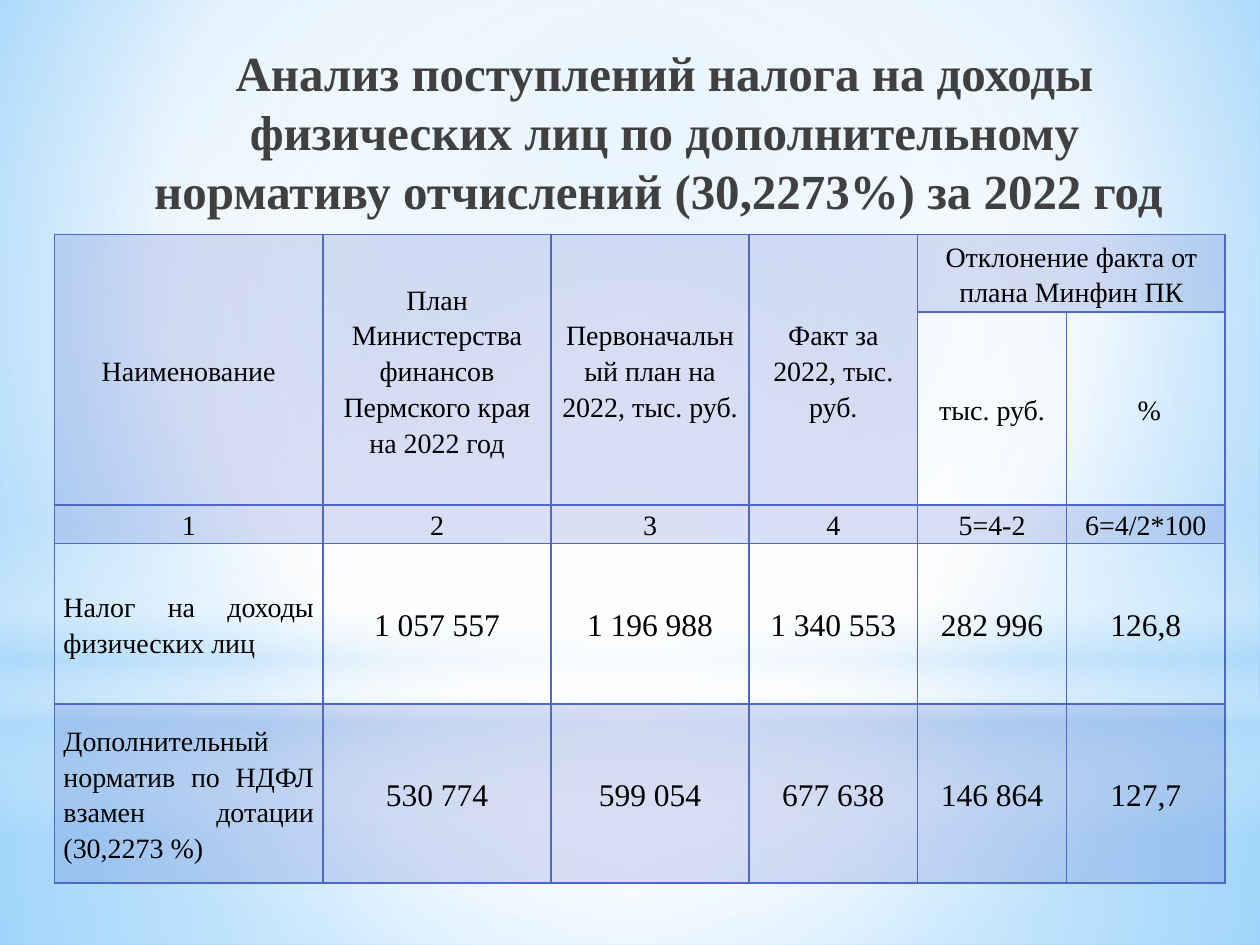
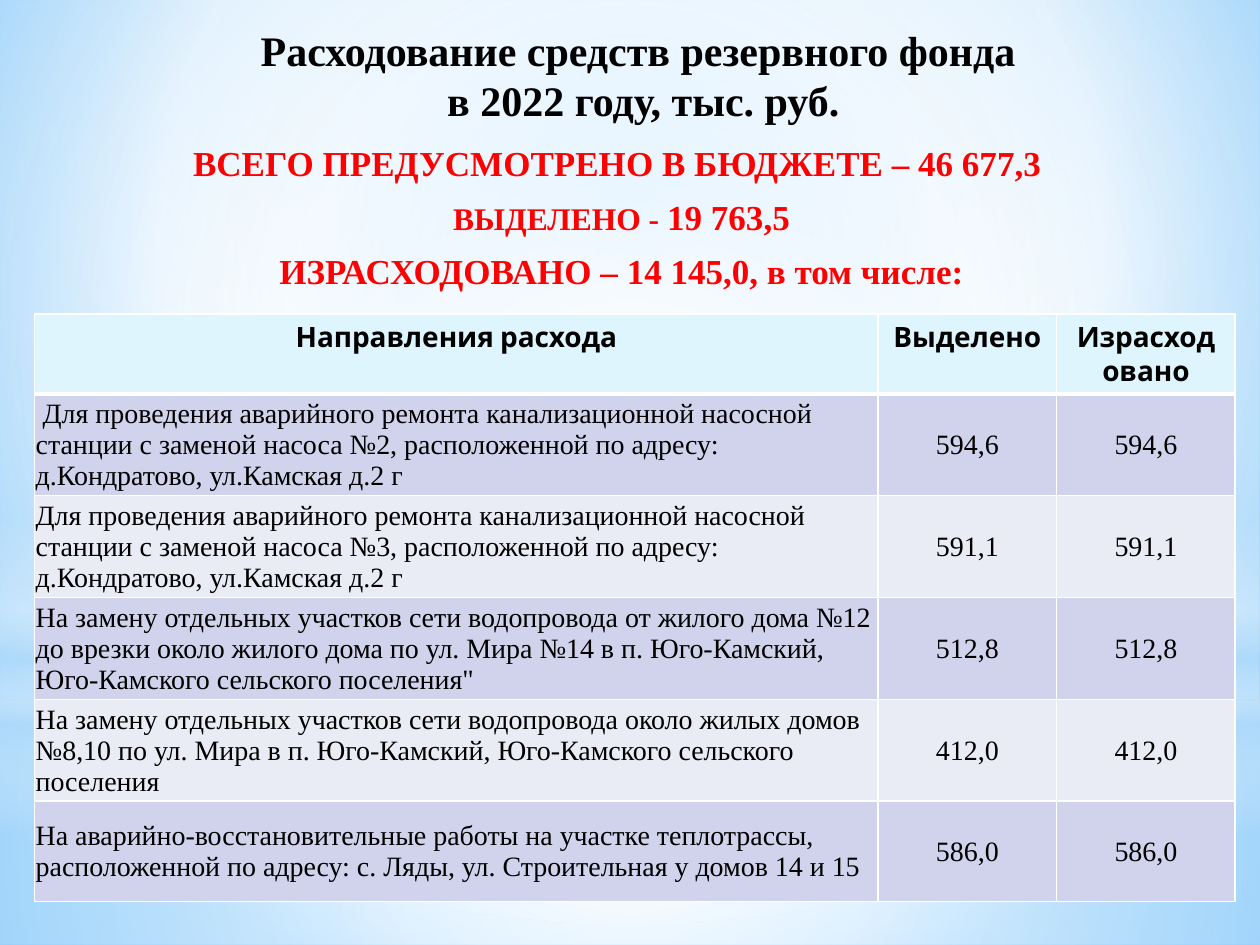
import pptx
import pptx.dml.color
import pptx.enum.lang
import pptx.enum.shapes
import pptx.enum.text
import pptx.oxml.ns
import pptx.util
from lxml import etree

Cm = pptx.util.Cm
Pt = pptx.util.Pt
qn = pptx.oxml.ns.qn
ALIGN = pptx.enum.text.PP_ALIGN
ANCHOR = pptx.enum.text.MSO_ANCHOR
SHAPE = pptx.enum.shapes.MSO_SHAPE
RUSSIAN = pptx.enum.lang.MSO_LANGUAGE_ID.RUSSIAN

# Shared look
SERIF, SANS = "Times New Roman", "Cabin"
BLACK, CHARCOAL, RED, WHITE = "000000", "404040", "FF0000", "FFFFFF"
INDIGO, SKY, ICE = "4E67C8", "B4DCFA", "DFF5FD"
BANDS = ("D0D3EB", "E9EBF5")
CENTRE = (50, 50, 50, 50)

# Gradient stops: position, colour, opacity (percent)
SLIDE_STOPS = [(0, "9ED5FF", 100), (60, WHITE, 100), (100, "5BB9FF", 100)]
BACKDROP = [
    # preset, top, height, stops, focus (None: runs downwards)
    (SHAPE.RECTANGLE, 14.17, 4.88,
     [(0, WHITE, 91), (37, WHITE, 76), (100, SKY, 79)], CENTRE),
    (SHAPE.RECTANGLE, 0, 14.17,
     [(0, WHITE, 89), (48, WHITE, 62), (100, SKY, 79)], CENTRE),
    (SHAPE.RECTANGLE, 10.46, 6.35,
     [(0, WHITE, 0), (29, WHITE, 30), (45, SKY, 40), (55, WHITE, 26),
      (65, SKY, 60), (100, WHITE, 0)], None),
    (SHAPE.OVAL, 4.45, 14.17, [(0, WHITE, 100), (56, WHITE, 0)], CENTRE),
]

# Income tax table
TAX_WIDTHS = [5.41, 4.6, 3.99, 3.4, 3, 3.2]
TAX_HEIGHTS = [1.42, 3.61, 0.71, 3.23, 3.61]
TAX_MARGINS = (0.18, 0, 0)
TAX_ROWS = [
    ["Наименование", "План Министерства финансов Пермского края на 2022 год",
     "Первоначальный план на 2022, тыс. руб.", "Факт за 2022, тыс. руб.",
     "Отклонение факта от плана Минфин ПК", ""],
    ["", "", "", "", "тыс. руб.", " %"],
    ["1", "2", "3", "4", "5=4-2", "6=4/2*100"],
    ["Налог на доходы физических лиц",
     "1 057 557", "1 196 988", "1 340 553", "282 996", "126,8"],
    ["Дополнительный норматив по НДФЛ взамен дотации (30,2273 %)",
     "530 774", "599 054", "677 638", "146 864", "127,7"],
]

# Reserve fund table
FUND_WIDTHS = [17, 3.6, 3.6]
FUND_HEIGHTS = [1.61, 1.89, 2.03, 2.03, 1.9, 2.03]
FUND_MARGINS = (0.02, 0.02, 0)
FUND_ROWS = [
    ["Направления расхода", "Выделено", "Израсходовано"],
    [" Для проведения аварийного ремонта канализационной насосной станции "
     "с заменой насоса №2, расположенной по адресу: д.Кондратово, "
     "ул.Камская д.2 г", "594,6", "594,6"],
    ["Для проведения аварийного ремонта канализационной насосной станции "
     "с заменой насоса №3, расположенной по адресу: д.Кондратово, "
     "ул.Камская д.2 г", "591,1", "591,1"],
    ["На замену отдельных участков сети водопровода от жилого дома №12 до "
     "врезки около жилого дома по ул. Мира №14 в п. Юго-Камский, "
     "Юго-Камского сельского поселения\"", "512,8", "512,8"],
    ["На замену отдельных участков сети водопровода около жилых домов №8,10 "
     "по ул. Мира в п. Юго-Камский, Юго-Камского сельского поселения",
     "412,0", "412,0"],
    ["На аварийно-восстановительные работы на участке теплотрассы, "
     "расположенной по адресу: с. Ляды, ул. Строительная у домов 14 и 15",
     "586,0", "586,0"],
]


def colour(code):
    return pptx.dml.color.RGBColor.from_string(code)


def add_colour(parent, code, opacity=100):
    node = etree.SubElement(parent, qn("a:srgbClr"), val=code)
    if opacity < 100:
        etree.SubElement(node, qn("a:alpha"), val=str(opacity * 1000))


# Backdrop
def set_gradient(fill, holder, stops, focus):
    fill.gradient()
    gradient = next(holder.iter(qn("a:gradFill")))
    for child in list(gradient):
        gradient.remove(child)
    stop_list = etree.SubElement(gradient, qn("a:gsLst"))
    for position, code, opacity in stops:
        stop = etree.SubElement(stop_list, qn("a:gs"), pos=str(position * 1000))
        add_colour(stop, code, opacity)
    if focus:
        circle = etree.SubElement(gradient, qn("a:path"), path="circle")
        sides = {side: str(share * 1000) for side, share in zip("ltrb", focus)}
        etree.SubElement(circle, qn("a:fillToRect"), **sides)
    else:
        etree.SubElement(gradient, qn("a:lin"), ang="5400000", scaled="0")


def add_page(deck):
    page = deck.slides.add_slide(deck.slide_layouts[6])
    set_gradient(page.background.fill, page.element, SLIDE_STOPS, (20, 10, 20, 60))
    for preset, top, height, stops, focus in BACKDROP:
        glow = page.shapes.add_shape(preset, 0, Cm(top), deck.slide_width, Cm(height))
        glow.shadow.inherit = False
        glow.line.fill.background()
        set_gradient(glow.fill, glow.element, stops, focus)
    return page


# Text
def add_span(para, text, size, code=BLACK, bold=False, font=SERIF):
    span = para.add_run()
    span.text = text
    span.font.name = font
    span.font.size = Pt(size)
    span.font.bold = bold
    span.font.language_id = RUSSIAN
    span.font.color.rgb = colour(code)


def add_box(page, left, top, width, height):
    box = page.shapes.add_textbox(Cm(left), Cm(top), Cm(width), Cm(height))
    box.text_frame.word_wrap = True
    box.text_frame.vertical_anchor = ANCHOR.TOP
    return box.text_frame


def add_title(page, place, lines, size, code):
    para = add_box(page, *place).paragraphs[0]
    para.alignment = ALIGN.CENTER
    for index, line in enumerate(lines):
        if index:
            para.add_line_break()
        add_span(para, line, size, code, bold=True)


def add_totals(page, place, totals):
    frame = add_box(page, *place)
    for index, spans in enumerate(totals):
        para = frame.add_paragraph() if index else frame.paragraphs[0]
        para.alignment = ALIGN.CENTER
        para.space_before = Pt(4) if index else Pt(0)
        para.space_after = Pt(3)
        for text, size in spans:
            add_span(para, text, size, RED, bold=True)


# Tables
def add_table(page, left, top, widths, heights):
    frame = page.shapes.add_table(len(heights), len(widths), Cm(left), Cm(top),
                                  Cm(sum(widths)), Cm(sum(heights)))
    table = frame.table
    table.first_row = table.horz_banding = False
    for column, width in zip(table.columns, widths):
        column.width = Cm(width)
    for row, height in zip(table.rows, heights):
        row.height = Cm(height)
    return table


def style_cell(cell, fill, border, opacity=100, top=1, bottom=1):
    if fill:
        cell.fill.solid()
        cell.fill.fore_color.rgb = colour(fill)
    else:
        cell.fill.background()
    properties = cell._tc.get_or_add_tcPr()
    if fill and opacity < 100:
        shade = next(properties.iter(qn("a:srgbClr")))
        etree.SubElement(shade, qn("a:alpha"), val=str(opacity * 1000))
    edges = (("L", 1), ("R", 1), ("T", top), ("B", bottom))
    for index, (side, width) in enumerate(edges):
        edge = etree.Element(qn("a:ln" + side), w=str(Pt(width)))
        add_colour(etree.SubElement(edge, qn("a:solidFill")), border)
        properties.insert(index, edge)


def fill_cell(cell, text, size, align, margins=None, spacing=None, **look):
    if margins:
        cell.margin_left = cell.margin_right = Cm(margins[0])
        cell.margin_top, cell.margin_bottom = Cm(margins[1]), Cm(margins[2])
        cell.vertical_anchor = ANCHOR.MIDDLE
    para = cell.text_frame.paragraphs[0]
    para.alignment = align
    para.line_spacing = spacing
    if text:
        add_span(para, text, size, **look)


def add_tax_table(page):
    table = add_table(page, 1.1, 4.73, TAX_WIDTHS, TAX_HEIGHTS)
    for r, row in enumerate(TAX_ROWS):
        for c, text in enumerate(row):
            cell = table.cell(r, c)
            clear = r == 3 or (r == 1 and c > 3)
            style_cell(cell, None if clear else INDIGO, INDIGO, opacity=20)
            is_name, is_value = r > 2 and c == 0, r > 2 and c > 0
            fill_cell(cell, text, 18 if is_value else 16,
                      ALIGN.JUSTIFY if is_name else ALIGN.CENTER,
                      TAX_MARGINS, spacing=1.15)
    for c in range(4):
        table.cell(0, c).merge(table.cell(1, c))
    table.cell(0, 4).merge(table.cell(0, 5))


def add_fund_table(page):
    table = add_table(page, 0.7, 6.33, FUND_WIDTHS, FUND_HEIGHTS)
    for r, row in enumerate(FUND_ROWS):
        for c, text in enumerate(row):
            cell = table.cell(r, c)
            if r == 0:
                style_cell(cell, ICE, WHITE, bottom=3)
                fill_cell(cell, text, 16, ALIGN.CENTER, bold=True, font=SANS)
            else:
                style_cell(cell, BANDS[(r - 1) % 2], WHITE, top=3 if r == 1 else 1)
                fill_cell(cell, text, 16, ALIGN.CENTER if c else ALIGN.LEFT,
                          FUND_MARGINS)


def main():
    deck = pptx.Presentation()
    deck.slide_width, deck.slide_height = Cm(25.4), Cm(19.05)

    # Income tax receipts
    page = add_page(deck)
    add_title(page, (2.5, 0.74, 21.79, 3.81),
              ["Анализ поступлений налога на доходы физических лиц по "
               "дополнительному нормативу отчислений (30,2273%) за 2022 год "],
              28, CHARCOAL)
    add_tax_table(page)

    # Reserve fund spending
    page = add_page(deck)
    add_title(page, (1.5, 0.36, 22.94, 1.5),
              ["Расходование средств резервного фонда ", "в 2022 году, тыс. руб."],
              24, BLACK)
    add_totals(page, (0.49, 2.72, 24.08, 15.88), [
        [("ВСЕГО ПРЕДУСМОТРЕНО В БЮДЖЕТЕ – 46 677,3 ", 20)],
        [("ВЫДЕЛЕНО - ", 18), ("19 763,5", 20)],
        [("ИЗРАСХОДОВАНО – 14 145,0, в том числе:", 20)],
    ])
    add_fund_table(page)

    deck.save("out.pptx")


if __name__ == "__main__":
    main()
